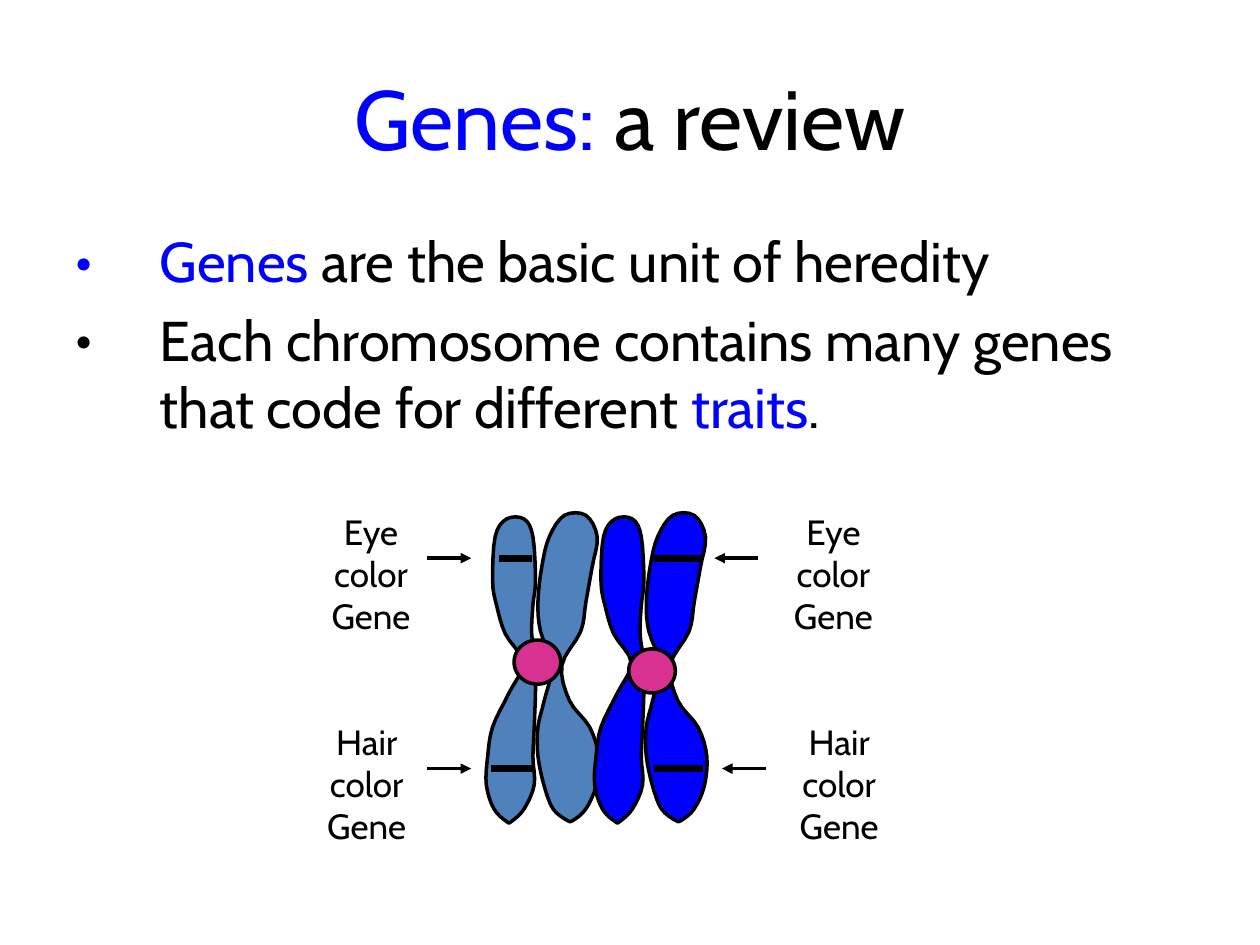
from dataclasses import dataclass
from typing import NamedTuple

from lxml.etree import SubElement
from pptx import Presentation
from pptx.dml.color import RGBColor
from pptx.enum.shapes import MSO_CONNECTOR as Connector, MSO_SHAPE as Preset
from pptx.enum.text import MSO_ANCHOR as Anchor, PP_ALIGN as Align
from pptx.oxml.ns import qn
from pptx.util import Inches, Pt

FONT = "Cabin"
COLORS = {"blue": "0000FF", "steel": "4F81BD", "pink": "D93192", "black": "000000"}
WIDTH, HEIGHT = Inches(10), Inches(7.5)
COLUMNS = 100
CELL = WIDTH // COLUMNS

CHROMOSOME_STEP = 8.6
CURVE_STEPS = 4
ARROW_LENGTH = 3.5
LEFT_ARROW_TIP = 37.4
LEFT_BAND_END = 42.2
RIGHT_BAND = (51.9, 55.8)
RIGHT_LABEL = 60
THIN, THICK = 2, 4


class Section(NamedTuple):
    row: float
    left: float
    right: float


class Run(NamedTuple):
    text: str
    color: str = "black"


@dataclass
class Box:
    column: float
    row: float
    columns: float
    rows: float

    def place(self) -> list:
        return [cells(n) for n in (self.column, self.row, self.columns, self.rows)]


@dataclass
class Gene:
    trait: str
    label: Box
    line_row: float
    left_band_start: float
    right_arrow_tip: float


@dataclass
class Chromosome:
    shift: float
    color: str
    centromere: Box


RIGHT_CHROMATID = [
    Section(40.9, 44.8, 46.5), Section(42.6, 43.6, 47.4),
    Section(45, 43, 47), Section(47.8, 42.7, 46.5),
    Section(50.1, 42.9, 46.1), Section(52.8, 43.8, 44.6),
    Section(55.6, 43.2, 45.2), Section(57.7, 42.7, 46.8),
    Section(60, 42.7, 47.5), Section(62.4, 43.2, 47.3),
    Section(64.2, 43.9, 46.5), Section(65.1, 45, 45.5),
]
LEFT_CHROMATID = [
    Section(41.2, 40.2, 41.6), Section(42.6, 39.3, 42.3),
    Section(46.1, 39.1, 42.5), Section(48, 39.4, 42.3),
    Section(50.3, 40.1, 42.2), Section(52.6, 41.5, 42.5),
    Section(55, 40.4, 42.5), Section(57.7, 39.1, 42.4),
    Section(60.1, 38.7, 42.3), Section(62.3, 38.6, 42.4),
    Section(64.2, 39.2, 41.6), Section(65.2, 40.2, 40.6),
]
CHROMOSOMES = [
    Chromosome(0, "steel", Box(40.8, 50.8, 3.7, 3.5)),
    Chromosome(CHROMOSOME_STEP, "blue", Box(49.9, 51.5, 3.7, 3.5)),
]
GENES = [
    Gene("Eye color", Box(23.3, 40, 12.3, 7.6), 44.3, 39.6, 56.7),
    Gene("Hair color", Box(22.5, 56.7, 13.2, 7.6), 61, 39, 57.3),
]


def cells(count: float) -> int:
    return round(count * CELL)


def rgb(name: str) -> RGBColor:
    return RGBColor.from_string(COLORS[name])


def add_bullet(paragraph, indent: float) -> None:
    properties = paragraph._p.get_or_add_pPr()
    properties.set("marL", str(cells(indent)))
    properties.set("indent", str(-cells(indent)))
    SubElement(properties, qn("a:buFont")).set("typeface", FONT)
    SubElement(properties, qn("a:buChar")).set("char", "•")


def write(shape, paragraphs: list, *, size: float, align=Align.LEFT,
          anchor=Anchor.TOP, side_margin: float = 1, space_before: float = 0,
          indent: float = 0) -> None:
    frame = shape.text_frame
    frame.word_wrap = True
    frame.vertical_anchor = anchor
    frame.margin_left = frame.margin_right = cells(side_margin)
    for index, runs in enumerate(paragraphs):
        paragraph = frame.add_paragraph() if index else frame.paragraphs[0]
        paragraph.alignment = align
        paragraph.space_before = Pt(space_before)
        if indent:
            add_bullet(paragraph, indent)
        for part in runs:
            run = paragraph.add_run()
            run.text = part.text
            run.font.name = FONT
            run.font.size = Pt(size)
            run.font.color.rgb = rgb(part.color)


def paint(shape, color: str) -> None:
    shape.shadow.inherit = False
    shape.fill.solid()
    shape.fill.fore_color.rgb = rgb(color)
    shape.line.color.rgb = rgb("black")
    shape.line.width = Pt(THIN)


def spline(before: float, start: float, end: float, after: float, t: float) -> float:
    return start + t / 2 * (end - before + t * (
        2 * before - 5 * start + 4 * end - after
        + t * (3 * (start - end) + after - before)))


def smooth_outline(sections: list) -> list:
    right_edge = [(section.right, section.row) for section in sections]
    left_edge = [(section.left, section.row) for section in reversed(sections)]
    corners = right_edge + left_edge
    outline = []
    for index in range(len(corners)):
        nearby = [corners[(index + k) % len(corners)] for k in (-1, 0, 1, 2)]
        for step in range(CURVE_STEPS):
            outline.append(tuple(spline(*axis, step / CURVE_STEPS)
                                 for axis in zip(*nearby)))
    return outline


def draw_chromosome(slide, chromosome: Chromosome) -> None:
    for sections in (RIGHT_CHROMATID, LEFT_CHROMATID):
        points = [(cells(column + chromosome.shift), cells(row))
                  for column, row in smooth_outline(sections)]
        builder = slide.shapes.build_freeform(*points[0])
        builder.add_line_segments(points[1:], close=True)
        paint(builder.convert_to_shape(), chromosome.color)


def draw_centromere(slide, box: Box) -> None:
    circle = slide.shapes.add_shape(Preset.OVAL, *box.place())
    circle.rotation = 1
    paint(circle, "pink")


def draw_line(slide, start: float, end: float, row: float, *,
              width: float, arrow: bool = False) -> None:
    line = slide.shapes.add_connector(
        Connector.STRAIGHT, cells(start), cells(row), cells(end), cells(row))
    line.line.color.rgb = rgb("black")
    line.line.width = Pt(width)
    if arrow:
        SubElement(line.line._get_or_add_ln(), qn("a:tailEnd")).set("type", "triangle")
    SubElement(line._element.spPr, qn("a:effectLst"))


def draw_gene(slide, gene: Gene) -> None:
    for start, end in ((gene.left_band_start, LEFT_BAND_END), RIGHT_BAND):
        draw_line(slide, start, end, gene.line_row, width=THICK)
    for tip, side in ((LEFT_ARROW_TIP, -1), (gene.right_arrow_tip, 1)):
        draw_line(slide, tip + side * ARROW_LENGTH, tip, gene.line_row,
                  width=THIN, arrow=True)
    for column in (gene.label.column, RIGHT_LABEL):
        box = Box(column, gene.label.row, gene.label.columns, gene.label.rows)
        write(slide.shapes.add_textbox(*box.place()),
              [[Run(gene.trait)], [Run("Gene")]],
              size=20, align=Align.CENTER, side_margin=2)


def main() -> None:
    presentation = Presentation()
    presentation.slide_width, presentation.slide_height = WIDTH, HEIGHT
    slide = presentation.slides.add_slide(presentation.slide_layouts[5])

    title = slide.shapes.title
    title.left, title.top, title.width, title.height = Box(5, 3, 90, 12.5).place()
    write(title, [[Run("Genes: ", "blue"), Run("a review")]],
          size=48, align=Align.CENTER, anchor=Anchor.MIDDLE)

    body = slide.shapes.add_textbox(*Box(5, 17.5, 90, 49.5).place())
    write(body, [
        [Run("Genes", "blue"), Run(" are the basic unit of heredity")],
        [Run("Each chromosome contains many genes that code for different "),
         Run("traits", "blue"), Run(".")],
    ], size=32, space_before=6.4, indent=6.7)

    for chromosome in CHROMOSOMES:
        draw_chromosome(slide, chromosome)
    for chromosome in CHROMOSOMES:
        draw_centromere(slide, chromosome.centromere)
    for gene in GENES:
        draw_gene(slide, gene)

    presentation.save("out.pptx")


if __name__ == "__main__":
    main()
